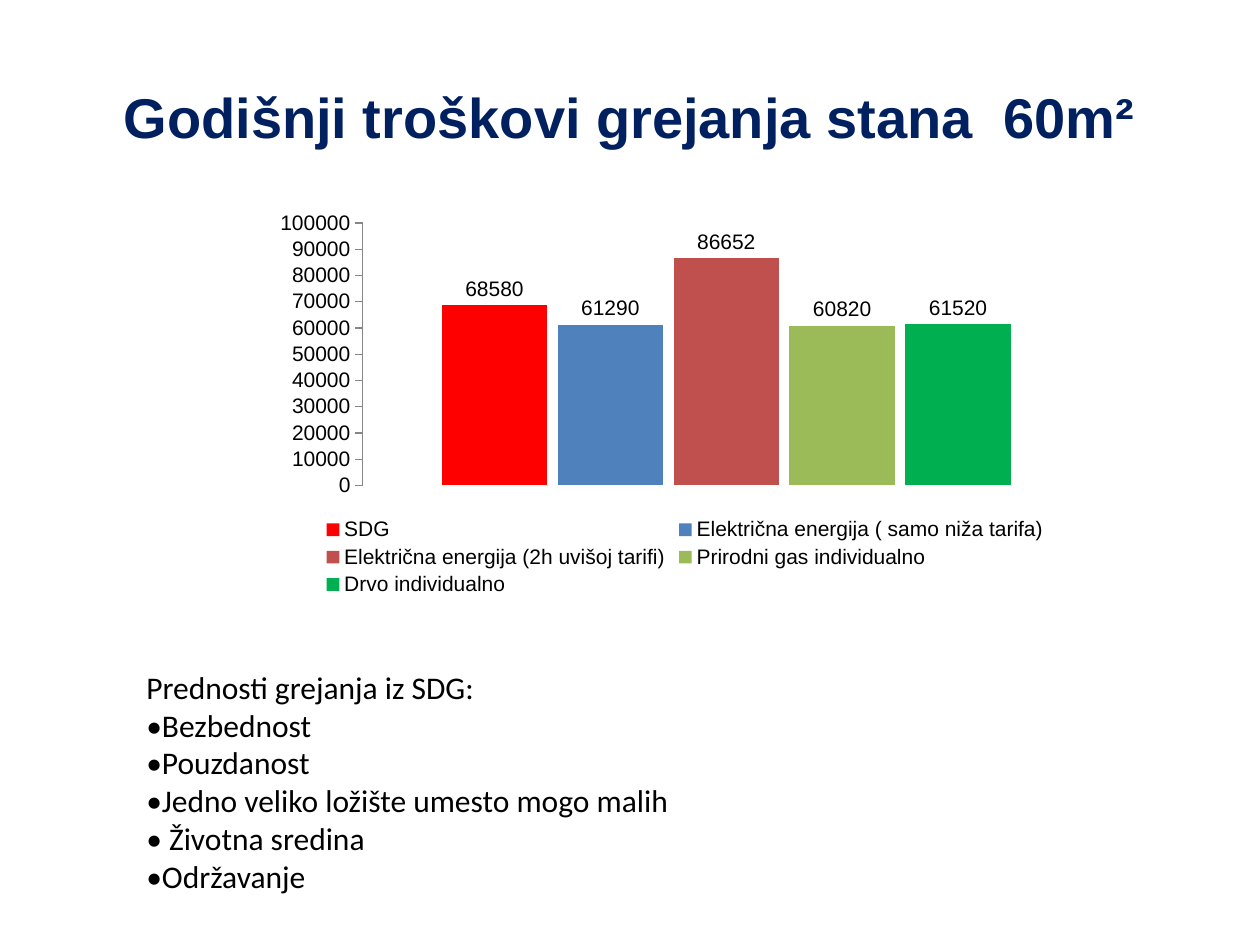
from pptx import Presentation
from pptx.chart.data import CategoryChartData
from pptx.dml.color import RGBColor
from pptx.enum.chart import XL_CHART_TYPE, XL_LABEL_POSITION, XL_LEGEND_POSITION, XL_TICK_MARK
from pptx.enum.text import MSO_ANCHOR, MSO_AUTO_SIZE, PP_ALIGN
from pptx.util import Cm, Pt

HEATING_COSTS = [
    ("SDG", 68580, "FF0000"),
    ("Električna energija ( samo niža tarifa)", 61290, "4F81BD"),
    ("Električna energija (2h uvišoj tarifi)", 86652, "C0504D"),
    ("Prirodni gas individualno", 60820, "9BBB59"),
    ("Drvo individualno", 61520, "00B050"),
]
ADVANTAGES = [
    "Prednosti grejanja iz SDG:",
    "•Bezbednost",
    "•Pouzdanost",
    "•Jedno veliko ložište umesto mogo malih",
    "• Životna sredina",
    "•Održavanje",
]


def color(hex_code):
    return RGBColor.from_string(hex_code)


def style_font(font, size, name="Arial", hex_code="000000", bold=False):
    font.size = Pt(size)
    font.name = name
    font.bold = bold
    font.color.rgb = color(hex_code)


def add_title(slide, left, top, width, height):
    frame = slide.shapes.add_textbox(left, top, width, height).text_frame
    frame.word_wrap = True
    frame.vertical_anchor = MSO_ANCHOR.MIDDLE
    heading = frame.paragraphs[0]
    heading.alignment = PP_ALIGN.CENTER
    run = heading.add_run()
    run.text = "Godišnji troškovi grejanja stana  60m²"
    style_font(run.font, 32, hex_code="002060", bold=True)


def add_cost_chart(slide, left, top, width, height):
    costs = CategoryChartData()
    costs.categories = ["1"]
    for heating, cost, _ in HEATING_COSTS:
        costs.add_series(heating, [cost])
    chart = slide.shapes.add_chart(
        XL_CHART_TYPE.COLUMN_CLUSTERED, left, top, width, height, costs
    ).chart
    style_font(chart.font, 10, "Calibri")
    chart.has_title = False

    chart.has_legend = True
    chart.legend.position = XL_LEGEND_POSITION.BOTTOM
    chart.legend.include_in_layout = False
    style_font(chart.legend.font, 12)

    chart.category_axis.visible = False
    cost_axis = chart.value_axis
    cost_axis.has_major_gridlines = False
    cost_axis.major_tick_mark = XL_TICK_MARK.OUTSIDE
    cost_axis.minimum_scale = 0
    cost_axis.maximum_scale = 100000
    cost_axis.major_unit = 10000
    cost_axis.format.line.color.rgb = color("868686")
    style_font(cost_axis.tick_labels.font, 12)

    columns = chart.plots[0]
    columns.vary_by_categories = False
    columns.gap_width = 150
    columns.overlap = -10
    for column, (_, _, hex_code) in zip(columns.series, HEATING_COSTS):
        column.format.fill.solid()
        column.format.fill.fore_color.rgb = color(hex_code)
        column.data_labels.show_value = True
        column.data_labels.position = XL_LABEL_POSITION.OUTSIDE_END
        style_font(column.data_labels.font, 12)


def add_advantages(slide, left, top, width, height):
    frame = slide.shapes.add_textbox(left, top, width, height).text_frame
    frame.word_wrap = True
    frame.auto_size = MSO_AUTO_SIZE.SHAPE_TO_FIT_TEXT
    for index, advantage in enumerate(ADVANTAGES):
        line = frame.add_paragraph() if index else frame.paragraphs[0]
        run = line.add_run()
        run.text = advantage
        style_font(run.font, 18, "Calibri")


def main():
    presentation = Presentation()
    presentation.slide_width = Cm(25.4)
    presentation.slide_height = Cm(19.05)
    slide = presentation.slides.add_slide(presentation.slide_layouts[6])
    add_title(slide, Cm(1.27), Cm(0.76), Cm(22.86), Cm(3.18))
    add_cost_chart(slide, Cm(5.31), Cm(4.11), Cm(17), Cm(8))
    add_advantages(slide, Cm(2.7), Cm(13.34), Cm(20.8), Cm(4.88))
    presentation.save("out.pptx")


if __name__ == "__main__":
    main()
